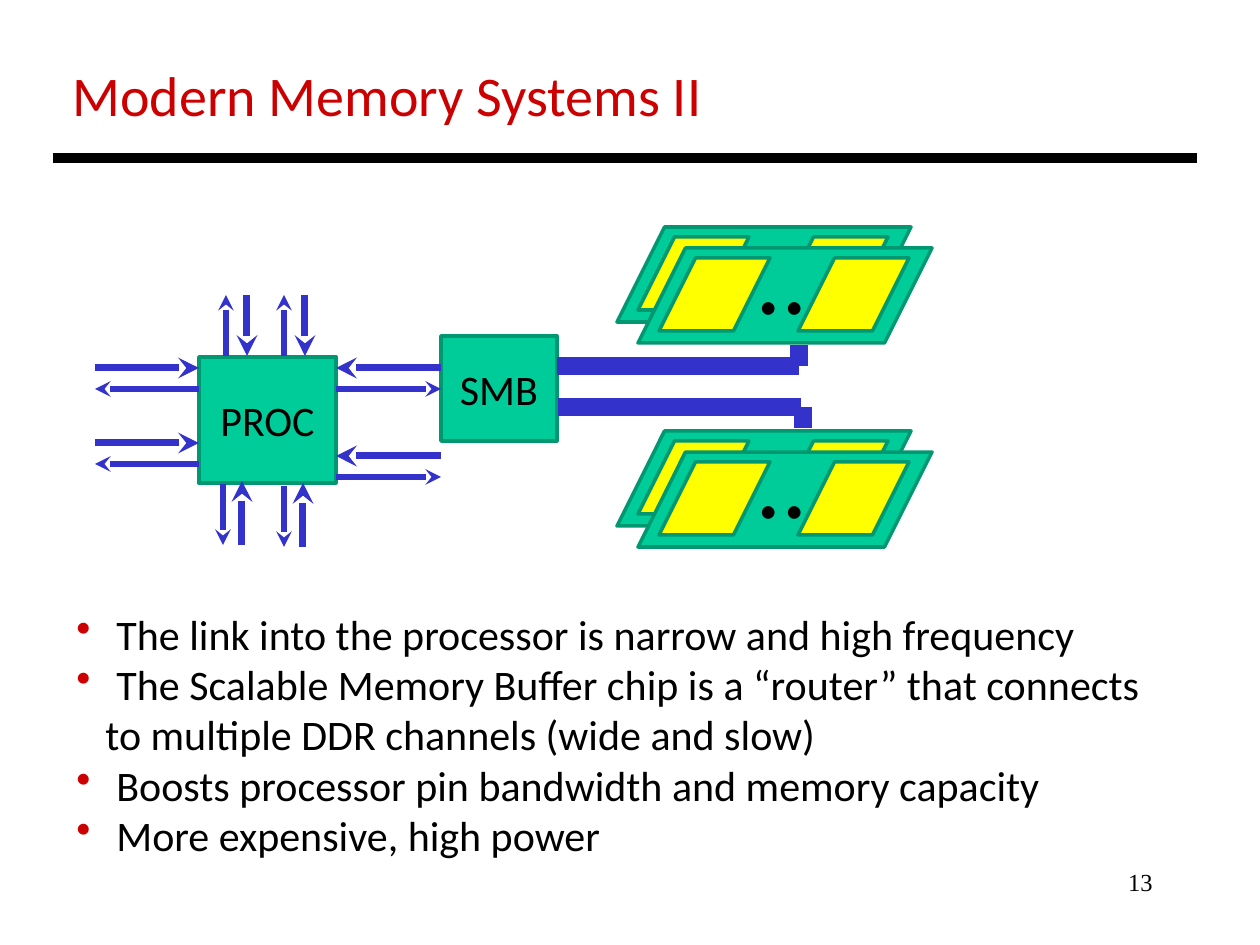
from pptx import Presentation
from pptx.dml.color import RGBColor
from pptx.enum.shapes import MSO_CONNECTOR, MSO_SHAPE
from pptx.enum.text import MSO_ANCHOR, PP_ALIGN
from pptx.oxml.ns import qn
from pptx.util import Inches, Pt
from lxml.etree import SubElement

PX = Inches(1) / 126
BLACK, RED, BLUE = "000000", "CC0000", "3333CC"
GREEN, DARK_GREEN, YELLOW = "00CC99", "009771", "FFFF00"


def px(*lengths):
    return [round(length * PX) for length in lengths]


def color(hex_string):
    return RGBColor.from_string(hex_string)


def set_font(paragraph, size, hex_string=BLACK, name="Calibri"):
    paragraph.font.size = Pt(size)
    paragraph.font.name = name
    paragraph.font.color.rgb = color(hex_string)


def add_text(slide, box, lines, size, hex_string=BLACK, name="Calibri", wrap=False):
    frame = slide.shapes.add_textbox(*px(*box)).text_frame
    frame.word_wrap = wrap
    frame.text = "\n".join(lines)
    for paragraph in frame.paragraphs:
        set_font(paragraph, size, hex_string, name)
    return frame


def add_block(slide, kind, box, fill, label=""):
    shape = slide.shapes.add_shape(kind, *px(*box))
    shape.shadow.inherit = False
    shape.fill.solid()
    shape.fill.fore_color.rgb = color(fill)
    shape.line.color.rgb = color(DARK_GREEN)
    shape.line.width = Pt(2)
    if label:
        frame = shape.text_frame
        frame.word_wrap = False
        frame.vertical_anchor = MSO_ANCHOR.MIDDLE
        paragraph = frame.paragraphs[0]
        paragraph.text = label
        paragraph.alignment = PP_ALIGN.CENTER
        set_font(paragraph, 24)
    return shape


def add_line(slide, start, end, width, hex_string=BLUE, arrow=None):
    line = slide.shapes.add_connector(MSO_CONNECTOR.STRAIGHT, *px(*start, *end))
    line.line.color.rgb = color(hex_string)
    line.line.width = Pt(width)
    properties = line.element.spPr
    if arrow:
        SubElement(properties.find(qn("a:ln")), qn(f"a:{arrow}End"), type="stealth")
    SubElement(properties, qn("a:effectLst"))


def add_inbound(slide, processor_end, outer_end):
    add_line(slide, processor_end, outer_end, 4, arrow="head")


def add_outbound(slide, processor_end, outer_end):
    add_line(slide, processor_end, outer_end, 3, arrow="tail")


def add_parallelogram(slide, box, fill):
    shape = add_block(slide, MSO_SHAPE.PARALLELOGRAM, box, fill)
    shape.adjustments[0] = 0.5


def add_memory_modules(slide, left, top):
    # Two overlapping boards, each with a first and a last chip
    for shift in (0, 21):
        x, y = left + shift, top + shift
        add_parallelogram(slide, (x, y, 294, 95), GREEN)
        for chip_offset in (21, 160):
            add_parallelogram(slide, (x + chip_offset, y + 10, 111, 73), YELLOW)
    add_text(slide, (left + 126, top - 24, 79, 140), [".."], 60)


def add_bus(slide, start, corner_x, riser):
    y = start[1]
    add_line(slide, start, (corner_x, y), 10)
    add_line(slide, (riser[0], y), riser, 10)


def add_processor_links(slide):
    # Left and right sides
    for processor_x, outer_x, rows in ((336, 441, (368, 456)), (199, 95, (368, 443))):
        for y in rows:
            add_inbound(slide, (processor_x, y), (outer_x, y))
            add_outbound(slide, (processor_x, y + 21), (outer_x, y + 21))
    # Top side
    for x in (226, 284):
        add_outbound(slide, (x, 356), (x, 295))
        add_inbound(slide, (x + 21, 356), (x + 21, 295))
    # Bottom side
    for x, y in ((223, 484), (284, 486)):
        add_outbound(slide, (x, y), (x, y + 61))
        add_inbound(slide, (x + 19, y - 3), (x + 19, y + 61))


def add_bullets(slide, box, items):
    # Each item holds its lines; only the first carries the bullet
    lines = [line for item in items for line in item]
    bulleted = [index == 0 for item in items for index in range(len(item))]
    frame = add_text(slide, box, lines, 24)
    for paragraph, has_bullet in zip(frame.paragraphs, bulleted):
        properties = paragraph._p.get_or_add_pPr()
        margin = px(40 if has_bullet else 29)[0]
        properties.set("marL", str(margin))
        properties.set("indent", str(-margin if has_bullet else 0))
        if has_bullet:
            bullet_color = SubElement(properties, qn("a:buClr"))
            SubElement(bullet_color, qn("a:srgbClr"), val=RED)
            SubElement(properties, qn("a:buChar"), char="•")


def main():
    presentation = Presentation()
    presentation.slide_width, presentation.slide_height = Inches(10), Inches(7.5)
    slide = presentation.slides.add_slide(presentation.slide_layouts[6])

    # Title, rule and slide number
    add_text(slide, (60, 54, 662, 81), ["Modern Memory Systems II"], 32, RED)
    add_line(slide, (53, 158), (1197, 158), 6, BLACK)
    number = add_text(slide, (903, 861, 262, 63), ["13"], 14,
                      name="Times New Roman", wrap=True)
    number.paragraphs[0].alignment = PP_ALIGN.RIGHT

    # Processor and memory buffer
    add_block(slide, MSO_SHAPE.RECTANGLE, (199, 357, 137, 126), GREEN, "PROC")
    add_block(slide, MSO_SHAPE.RECTANGLE, (441, 336, 116, 105), GREEN, "SMB")
    add_processor_links(slide)

    # Memory channels
    add_bus(slide, (557, 366), 799, (799, 345))
    add_bus(slide, (558, 407), 801, (803, 428))
    for top in (227, 431):
        add_memory_modules(slide, 617, top)

    # Remarks
    add_bullets(slide, (64, 602, 1090, 267), [
        ["The link into the processor is narrow and high frequency"],
        ["The Scalable Memory Buffer chip is a “router” that connects",
         "to multiple DDR channels (wide and slow)"],
        ["Boosts processor pin bandwidth and memory capacity"],
        ["More expensive, high power"],
    ])
    presentation.save("out.pptx")


if __name__ == "__main__":
    main()
